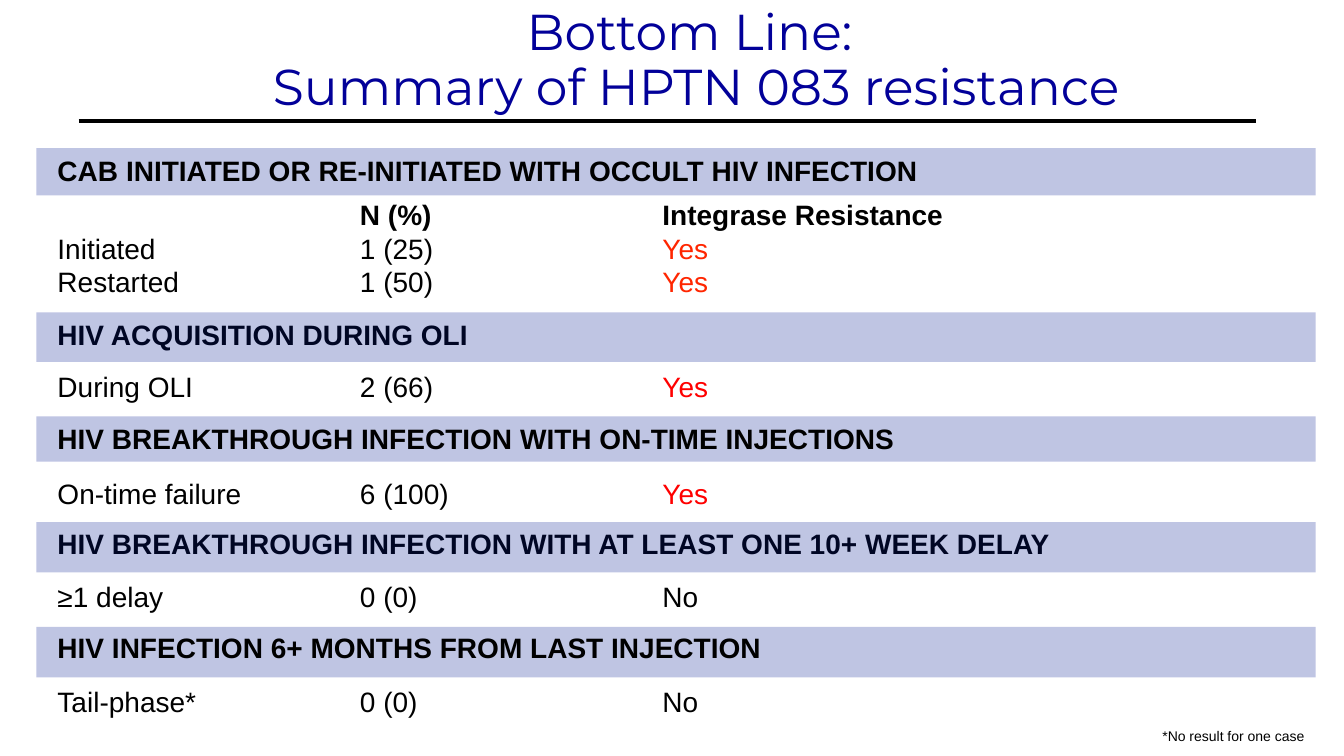
"""Build the HPTN 083 resistance summary slide."""
from lxml.etree import SubElement
from pptx import Presentation
from pptx.dml.color import RGBColor
from pptx.enum.shapes import MSO_CONNECTOR as Connector, MSO_SHAPE as Shape
from pptx.enum.text import MSO_ANCHOR as Anchor, PP_ALIGN as Align
from pptx.oxml.ns import qn
from pptx.util import Inches, Pt

COLORS = {
    "title": "020099", "text": "000000", "band": "011892",
    "orange": "FF2600", "red": "FF0000",
}
TITLE = "Bottom Line: \vSummary of HPTN 083 resistance"
FOOTNOTE = "*No result for one case"
SECTIONS = [
    {"heading": "CAB INITIATED OR RE-INITIATED WITH OCCULT HIV INFECTION",
     "top": 1.47, "band": (1.47, 0.47), "rows_top": 1.91, "tinted": False,
     "rows": [("", "N (%)", "Integrase Resistance", "text"),
              ("Initiated", "1 (25)", "Yes", "orange"),
              ("Restarted", "1 (50)", "Yes", "orange")]},
    {"heading": "HIV ACQUISITION DURING OLI",
     "top": 3.1, "band": (3.1, 0.49), "rows_top": 3.62, "tinted": True,
     "rows": [("During OLI", "2 (66)", "Yes", "red")]},
    {"heading": "HIV BREAKTHROUGH INFECTION WITH ON-TIME INJECTIONS",
     "top": 4.13, "band": (4.13, 0.45), "rows_top": 4.68, "tinted": False,
     "rows": [("On-time failure", "6 (100)", "Yes", "red")]},
    {"heading": "HIV BREAKTHROUGH INFECTION WITH AT LEAST ONE 10+ WEEK DELAY",
     "top": 5.17, "band": (5.18, 0.5), "rows_top": 5.7, "tinted": True,
     "rows": [("≥1 delay", "0 (0)", "No", "text")]},
    {"heading": "HIV INFECTION 6+ MONTHS FROM LAST INJECTION",
     "top": 6.21, "band": (6.22, 0.5), "rows_top": 6.74, "tinted": False,
     "rows": [("Tail-phase*", "0 (0)", "No", "text")]},
]
BAND_LEFT, BAND_WIDTH = 0.36, 12.69
TEXT_LEFT, TEXT_WIDTH = 0.57, 12.48
LINE_HEIGHT, TEXT_PADDING = 0.335, 0.1
TAB_STOPS = (3, 6)


def style(span, size, color, font="Arial", bold=False):
    span.font.size = Pt(size)
    span.font.name = font
    span.font.bold = bold
    span.font.color.rgb = RGBColor.from_string(COLORS[color])


def add_box(page, left, top, width, height, side_inset=0.0, wrap=True):
    box = page.shapes.add_textbox(
        Inches(left), Inches(top), Inches(width), Inches(height))
    frame = box.text_frame
    frame.word_wrap = wrap
    frame.margin_left = frame.margin_right = Inches(side_inset)
    return frame


def add_band(page, top, height):
    band = page.shapes.add_shape(
        Shape.RECTANGLE, Inches(BAND_LEFT), Inches(top),
        Inches(BAND_WIDTH), Inches(height))
    band.shadow.inherit = False
    band.line.fill.background()
    band.fill.solid()
    band.fill.fore_color.rgb = RGBColor.from_string(COLORS["band"])
    tint = band.fill._xPr.find(qn("a:solidFill"))[0]
    SubElement(tint, qn("a:alpha"), val="25000")


def add_heading(page, section):
    frame = add_box(page, TEXT_LEFT, section["top"], TEXT_WIDTH,
                    LINE_HEIGHT + TEXT_PADDING)
    frame.text = section["heading"]
    style(frame.paragraphs[0].runs[0], 20, "text", bold=True)


def add_rows(page, section):
    rows = section["rows"]
    frame = add_box(page, TEXT_LEFT, section["rows_top"], TEXT_WIDTH,
                    len(rows) * LINE_HEIGHT + TEXT_PADDING)
    for index, (label, count, result, color) in enumerate(rows):
        para = frame.add_paragraph() if index else frame.paragraphs[0]
        stops = SubElement(para._p.get_or_add_pPr(), qn("a:tabLst"))
        for stop in TAB_STOPS:
            SubElement(stops, qn("a:tab"), pos=str(Inches(stop)), algn="l")
        para.text = f"{label}\t{count}\t"
        para.add_run().text = result
        for span, span_color in zip(para.runs, ("text", color)):
            style(span, 20, span_color, bold=not label)


def add_title(page):
    frame = add_box(page, 0.92, 0.05, 11.97, 1.15, side_inset=0.1)
    frame.vertical_anchor = Anchor.BOTTOM
    para = frame.paragraphs[0]
    para.text = TITLE
    para.alignment = Align.CENTER
    para.line_spacing = 0.9
    for span in para.runs:
        style(span, 36, "title", font="Montserrat")
    rule = page.shapes.add_connector(
        Connector.STRAIGHT, Inches(0.78), Inches(1.2), Inches(12.46), Inches(1.2))
    rule.line.width = Pt(3)
    rule.line.color.rgb = RGBColor.from_string(COLORS["text"])
    SubElement(rule._element.spPr, qn("a:effectLst"))


def main():
    deck = Presentation()
    deck.slide_width, deck.slide_height = Inches(13.33), Inches(7.5)
    page = deck.slides.add_slide(deck.slide_layouts[6])
    add_title(page)
    for section in SECTIONS:
        if section["tinted"]:
            add_heading(page, section)
            add_band(page, *section["band"])
        else:
            add_band(page, *section["band"])
            add_heading(page, section)
        add_rows(page, section)
    footnote = add_box(page, 11.43, 7.17, 1.62, 0.27, side_inset=0.1, wrap=False)
    footnote.text = FOOTNOTE
    style(footnote.paragraphs[0].runs[0], 10, "text")
    deck.save("out.pptx")


if __name__ == "__main__":
    main()
